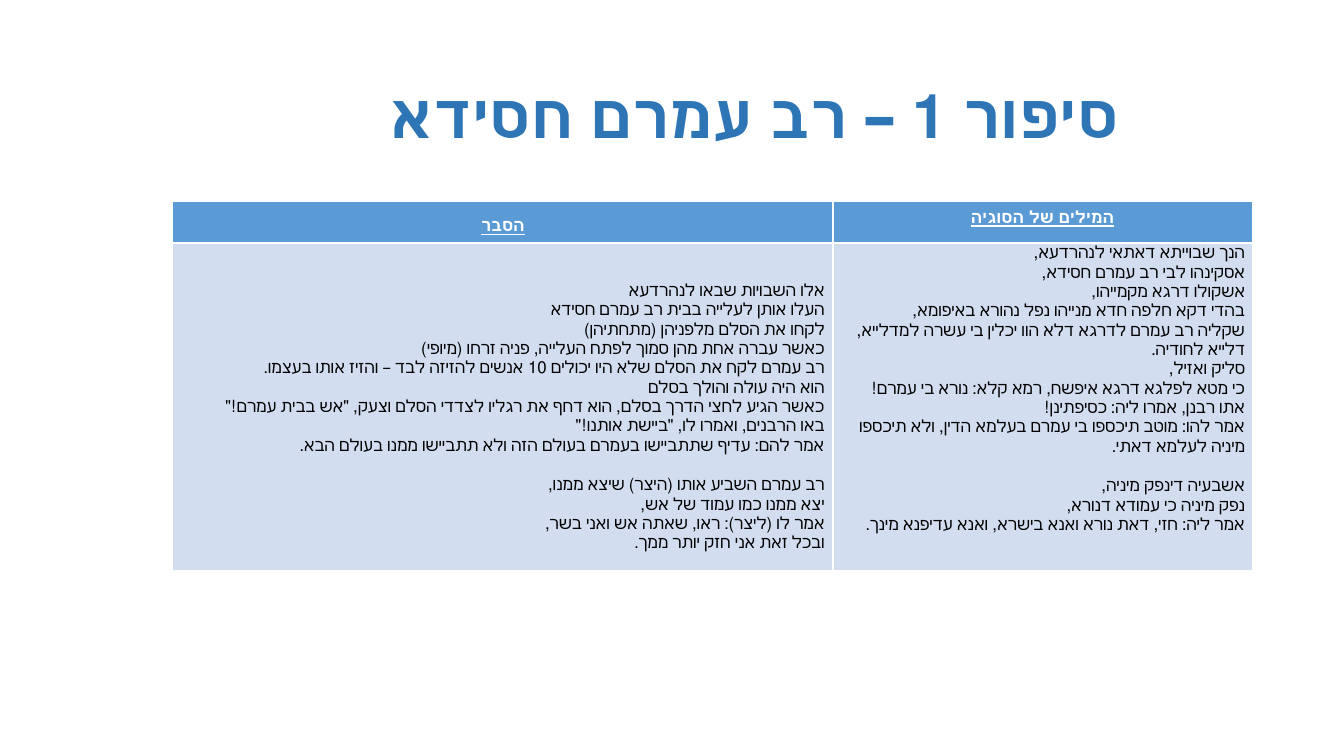
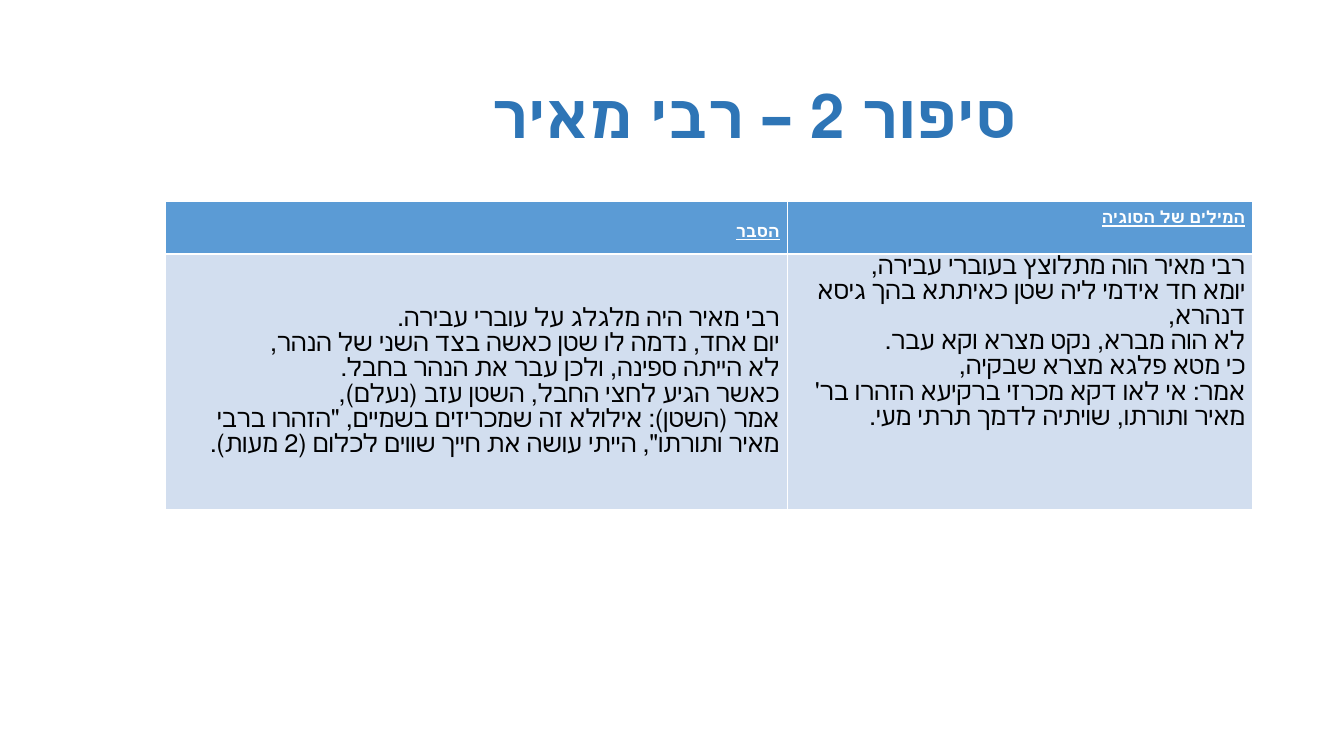
from pptx import Presentation
from pptx.dml.color import RGBColor
from pptx.enum.text import MSO_ANCHOR, MSO_AUTO_SIZE, PP_ALIGN
from pptx.util import Pt

CENTER, RIGHT = PP_ALIGN.CENTER, PP_ALIGN.RIGHT
TOP, MIDDLE = MSO_ANCHOR.TOP, MSO_ANCHOR.MIDDLE
NO_FIT = MSO_AUTO_SIZE.NONE

TITLE_BLUE = RGBColor(0x2E, 0x75, 0xB6)
HEADER_BLUE = RGBColor(0x5B, 0x9B, 0xD5)
PALE_BLUE = RGBColor(0xD2, 0xDE, 0xEF)
WHITE = RGBColor(0xFF, 0xFF, 0xFF)
BLACK = RGBColor(0, 0, 0)

TITLE_FONT, HEADER_FONT, BODY_FONT = "Cambria", "Times New Roman", "Calibri"
TITLE_BOX = (183, 29, 711, 104)
HEADERS = ("הסבר", "המילים של הסוגיה")
ANCHORS = (MIDDLE, TOP)
MARGINS = ((5.76, 5.76), (5.04, 0))
LINE_GAP = 14.5

STORIES = [
    {
        "title": "סיפור 1 – רב עמרם חסידא",
        "box": (123.4, 144), "cols": (471.6, 299.5), "rows": (29.5, 234),
        "header_align": CENTER, "font": HEADER_FONT, "size": 12,
        "spacing": 1.15, "lead": 13.8,
        "cells": (
            (
                ("אלו השבויות שבאו לנהרדעא",
                 "העלו אותן לעלייה בבית רב עמרם חסידא",
                 "לקחו את הסלם מלפניהן (מתחתיהן)",
                 "כאשר עברה אחת מהן סמוך לפתח העלייה, פניה זרחו (מיופי)",
                 "רב עמרם לקח את הסלם שלא היו יכולים 10 אנשים להזיזה לבד – והזיז אותו בעצמו.",
                 "הוא היה עולה והולך בסלם",
                 'כאשר הגיע לחצי הדרך בסלם, הוא דחף את רגליו לצדדי הסלם וצעק, "אש בבית עמרם!"',
                 'באו הרבנים, ואמרו לו, "ביישת אותנו!"',
                 "אמר להם: עדיף שתתביישו בעמרם בעולם הזה ולא תתביישו ממנו בעולם הבא."),
                ("רב עמרם השביע אותו (היצר) שיצא ממנו,",
                 "יצא ממנו כמו עמוד של אש,",
                 "אמר לו (ליצר): ראו, שאתה אש ואני בשר,",
                 "ובכל זאת אני חזק יותר ממך."),
            ),
            (
                ("הנך שבוייתא דאתאי לנהרדעא,",
                 "אסקינהו לבי רב עמרם חסידא,",
                 "אשקולו דרגא מקמייהו,",
                 "בהדי דקא חלפה חדא מנייהו נפל נהורא באיפומא,",
                 "שקליה רב עמרם לדרגא דלא הוו יכלין בי עשרה למדלייא, דלייא לחודיה.",
                 "סליק ואזיל,",
                 "כי מטא לפלגא דרגא איפשח, רמא קלא: נורא בי עמרם!",
                 "אתו רבנן, אמרו ליה: כסיפתינן!",
                 "אמר להו: מוטב תיכספו בי עמרם בעלמא הדין, ולא תיכספו מיניה לעלמא דאתי."),
                ("אשבעיה דינפק מיניה,",
                 "נפק מיניה כי עמודא דנורא,",
                 "אמר ליה: חזי, דאת נורא ואנא בישרא, ואנא עדיפנא מינך."),
            ),
        ),
    },
    {
        "title": "סיפור 2 – רבי מאיר",
        "box": (118.4, 144), "cols": (444.2, 331.9), "rows": (37.4, 182.9),
        "header_align": RIGHT, "font": BODY_FONT, "size": 18,
        "spacing": 1, "lead": 0,
        "cells": (
            (
                ("רבי מאיר היה מלגלג על עוברי עבירה.",
                 "יום אחד, נדמה לו שטן כאשה בצד השני של הנהר,",
                 "לא הייתה ספינה, ולכן עבר את הנהר בחבל.",
                 "כאשר הגיע לחצי החבל, השטן עזב (נעלם),",
                 'אמר (השטן): אילולא זה שמכריזים בשמיים, "הזהרו ברבי מאיר ותורתו", '
                 "הייתי עושה את חייך שווים לכלום (2 מעות)."),
            ),
            (
                ("רבי מאיר הוה מתלוצץ בעוברי עבירה,",
                 "יומא חד אידמי ליה שטן כאיתתא בהך גיסא דנהרא,",
                 "לא הוה מברא, נקט מצרא וקא עבר.",
                 "כי מטא פלגא מצרא שבקיה,",
                 "אמר: אי לאו דקא מכרזי ברקיעא הזהרו בר' מאיר ותורתו, שויתיה לדמך תרתי מעי."),
            ),
        ),
    },
]


def style_paragraph(p, text, font, size, color, align, strong=False, underline=False):
    """Write one right-to-left paragraph with uniform formatting."""
    p.text = text
    p.alignment = align
    p._p.get_or_add_pPr().set("rtl", "1")
    f = p.font
    f.name, f.size, f.bold, f.underline = font, Pt(size), strong, underline
    f.color.rgb = color


def add_title(s, text, box):
    """Place the title placeholder in the box and fill it."""
    sp = s.shapes.title
    sp.left, sp.top, sp.width, sp.height = map(Pt, box)
    tf = sp.text_frame
    tf.auto_size = NO_FIT
    tf.vertical_anchor = MIDDLE
    style_paragraph(tf.paragraphs[0], text, TITLE_FONT, 44, TITLE_BLUE, CENTER, True)


def format_cell(cell, col, fill, lead=0):
    """Set the fill, anchor and margins that belong to a column."""
    side, edge = MARGINS[col]
    cell.fill.solid()
    cell.fill.fore_color.rgb = fill
    cell.vertical_anchor = ANCHORS[col]
    cell.margin_left = cell.margin_right = Pt(side)
    cell.margin_top, cell.margin_bottom = Pt(edge + lead), Pt(edge)


def fill_body(cell, stanzas, story):
    """Write the stanzas of a cell, with a gap between them."""
    tf = cell.text_frame
    for i, stanza in enumerate(stanzas):
        for j, line in enumerate(stanza):
            p = tf.add_paragraph() if i or j else tf.paragraphs[0]
            style_paragraph(p, line, story["font"], story["size"], BLACK, RIGHT)
            p.line_spacing = story["spacing"]
            if i and not j:
                p.space_before = Pt(LINE_GAP)


def add_story_table(s, story):
    """Add the table of explanation and source words."""
    cols, rows = story["cols"], story["rows"]
    x, y = story["box"]
    table = s.shapes.add_table(2, 2, Pt(x), Pt(y), Pt(sum(cols)), Pt(sum(rows))).table
    for i, height in enumerate(rows):
        table.rows[i].height = Pt(height)
    for col, width in enumerate(cols):
        table.columns[col].width = Pt(width)
        head, body = table.cell(0, col), table.cell(1, col)
        format_cell(head, col, HEADER_BLUE)
        p = head.text_frame.paragraphs[0]
        style_paragraph(p, HEADERS[col], HEADER_FONT, 12, WHITE,
                        story["header_align"], True, True)
        p.line_spacing = 1.5
        format_cell(body, col, PALE_BLUE, 0 if col else story["lead"])
        fill_body(body, story["cells"][col], story)


def add_story_slide(prs, story):
    """Add one slide with a title and a story table."""
    s = prs.slides.add_slide(prs.slide_layouts[5])
    add_title(s, story["title"], TITLE_BOX)
    add_story_table(s, story)


def main():
    """Build and save the presentation."""
    prs = Presentation()
    prs.slide_width, prs.slide_height = Pt(960), Pt(540)
    for story in STORIES:
        add_story_slide(prs, story)
    prs.save("out.pptx")


if __name__ == "__main__":
    main()
